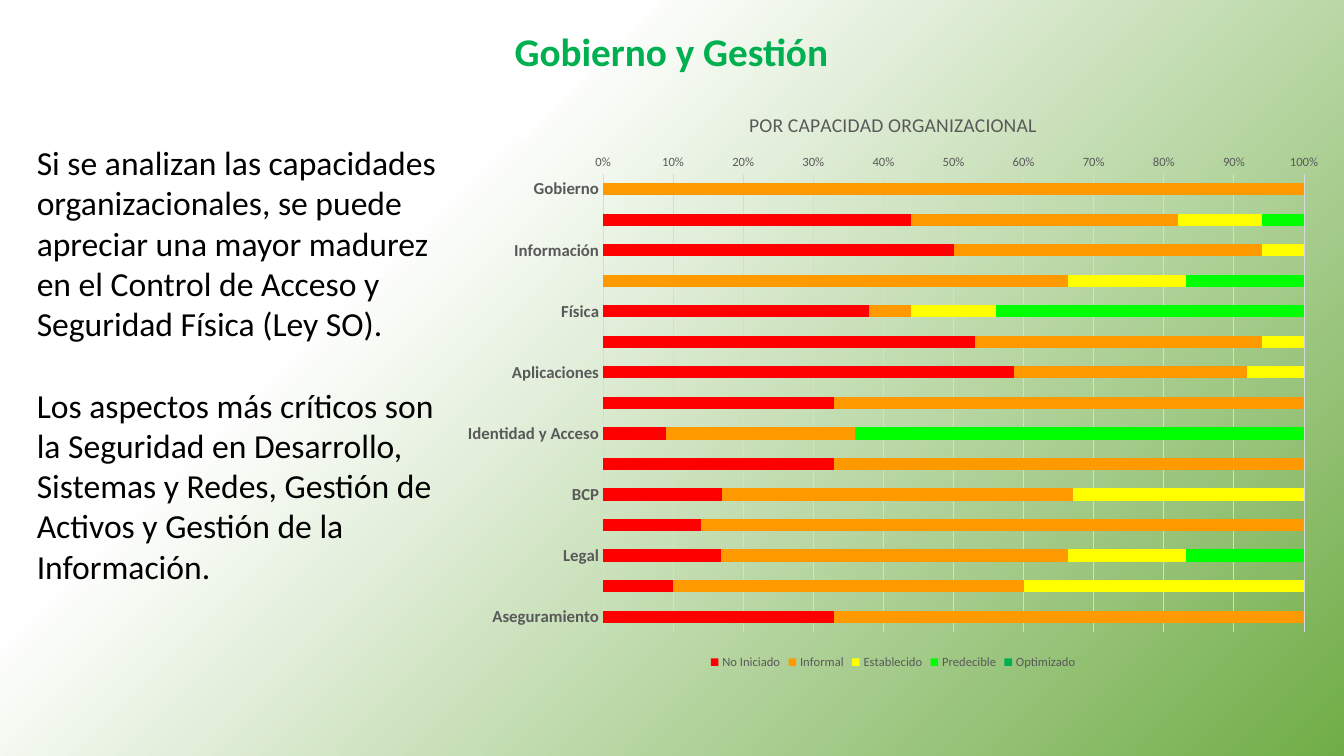
from copy import deepcopy
from dataclasses import dataclass

from pptx import Presentation
from pptx.chart.data import CategoryChartData
from pptx.dml.color import RGBColor
from pptx.enum.chart import XL_CHART_TYPE, XL_LEGEND_POSITION, XL_TICK_MARK
from pptx.enum.text import MSO_ANCHOR, MSO_AUTO_SIZE, PP_ALIGN
from pptx.util import Inches, Pt


@dataclass(frozen=True)
class Theme:
    font: str = "Calibri"
    white: str = "FFFFFF"
    leaf: str = "70AD47"
    head: str = "00B050"
    ink: str = "000000"
    gray: str = "595959"
    grid: str = "D9D9D9"
    head_size: int = 28
    body_size: int = 24
    title_size: int = 14
    label_size: int = 12
    base_size: int = 10
    small_size: int = 9


THEME = Theme()
WIDTH, HEIGHT = Inches(13.33), Inches(7.5)

# Left, top, width and height as shares of the slide
HEAD_BOX = (0.374, 0.029, 0.251, 0.076)
BODY_BOX = (0.02, 0.181, 0.323, 0.605)
CHART_BOX = (0.335, 0.12, 0.659, 0.771)

BODY = [
    "Si se analizan las capacidades organizacionales, se puede apreciar una "
    "mayor madurez en el Control de Acceso y Seguridad Física (Ley SO).",
    "Los aspectos más críticos son la Seguridad en Desarrollo, Sistemas y "
    "Redes, Gestión de Activos y Gestión de la Información.",
]
# Every second bar carries a label
AREAS = [
    "Gobierno", "Información", "Física", "Aplicaciones",
    "Identidad y Acceso", "BCP", "Legal", "Aseguramiento",
]
ROWS = 2 * len(AREAS) - 1
LEVELS = [
    ("No Iniciado", "FF0000",
     [0, 44, 50, 0, 38, 53, 58, 33, 9, 33, 17, 14, 17, 10, 33]),
    ("Informal", "FF9900",
     [100, 38, 44, 67, 6, 41, 33, 67, 27, 67, 50, 86, 50, 50, 67]),
    ("Establecido", "FFFF00",
     [0, 12, 6, 17, 12, 6, 8, 0, 0, 0, 33, 0, 17, 40, 0]),
    ("Predecible", "00FF00",
     [0, 6, 0, 17, 44, 0, 0, 0, 64, 0, 0, 0, 17, 0, 0]),
    ("Optimizado", "00B050", [0] * ROWS),
]


def place(box):
    """Turn shares of the slide into lengths."""
    return [round(part * full)
            for part, full in zip(box, (WIDTH, HEIGHT) * 2)]


def style(font, size, color, bold=False):
    font.name = THEME.font
    font.size = Pt(size)
    font.bold = bold
    font.color.rgb = RGBColor.from_string(color)


def paint_back(slide):
    fill = slide.background.fill
    fill.gradient()
    fill.gradient_angle = 315
    first, last = fill.gradient_stops
    first.color.rgb = RGBColor.from_string(THEME.white)
    first.position = 0
    last.color.rgb = RGBColor.from_string(THEME.leaf)
    last.position = 1
    # The white is held over the first 30% of the slope
    stops = slide.background._cSld.xpath(".//a:gs")
    hold = deepcopy(stops[0])
    hold.set("pos", "30000")
    stops[0].addnext(hold)


def add_head(slide, text):
    head = slide.shapes.title
    head.left, head.top, head.width, head.height = place(HEAD_BOX)
    frame = head.text_frame
    frame.text = text
    frame.word_wrap = False
    frame.auto_size = MSO_AUTO_SIZE.NONE
    frame.vertical_anchor = MSO_ANCHOR.MIDDLE
    line = frame.paragraphs[0]
    line.alignment = PP_ALIGN.CENTER
    style(line.runs[0].font, THEME.head_size, THEME.head, True)


def add_body(slide, texts):
    frame = slide.shapes.add_textbox(*place(BODY_BOX)).text_frame
    frame.word_wrap = True
    frame.text = "\n".join(texts)
    for line in frame.paragraphs:
        style(line.runs[0].font, THEME.body_size, THEME.ink)
    for line in frame.paragraphs[:-1]:
        line.space_after = Pt(THEME.body_size * 1.22)


def format_axis(axis, size, bold=False):
    axis.major_tick_mark = axis.minor_tick_mark = XL_TICK_MARK.NONE
    axis.format.line.fill.background()
    style(axis.tick_labels.font, size, THEME.gray, bold)


def add_bars(slide, title):
    data = CategoryChartData()
    data.categories = ["" if row % 2 else AREAS[row // 2]
                       for row in range(ROWS)]
    for name, _, values in LEVELS:
        data.add_series(name, values)
    chart = slide.shapes.add_chart(
        XL_CHART_TYPE.BAR_STACKED_100, *place(CHART_BOX), data).chart
    style(chart.font, THEME.base_size, THEME.ink)

    chart.has_title = True
    frame = chart.chart_title.text_frame
    frame.text = title
    style(frame.paragraphs[0].runs[0].font, THEME.title_size, THEME.gray)
    chart.chart_title.include_in_layout = False

    chart.has_legend = True
    chart.legend.position = XL_LEGEND_POSITION.BOTTOM
    chart.legend.include_in_layout = False
    style(chart.legend.font, THEME.small_size, THEME.gray)

    format_axis(chart.category_axis, THEME.label_size, True)
    chart.category_axis.reverse_order = True
    scale = chart.value_axis
    format_axis(scale, THEME.small_size)
    scale.tick_labels.number_format = "0%"
    scale.tick_labels.number_format_is_linked = False
    scale.has_major_gridlines = True
    rule = scale.major_gridlines.format.line
    rule.color.rgb = RGBColor.from_string(THEME.grid)
    rule.width = Pt(0.75)

    plot = chart.plots[0]
    plot.gap_width, plot.overlap = 150, 100
    plot.vary_by_categories = False
    for bars, (_, color, _) in zip(plot.series, LEVELS):
        bars.format.fill.solid()
        bars.format.fill.fore_color.rgb = RGBColor.from_string(color)


def main():
    deck = Presentation()
    deck.slide_width, deck.slide_height = WIDTH, HEIGHT
    slide = deck.slides.add_slide(deck.slide_layouts[5])
    paint_back(slide)
    add_head(slide, "Gobierno y Gestión")
    add_body(slide, BODY)
    add_bars(slide, "POR CAPACIDAD ORGANIZACIONAL")
    deck.save("out.pptx")


if __name__ == "__main__":
    main()
